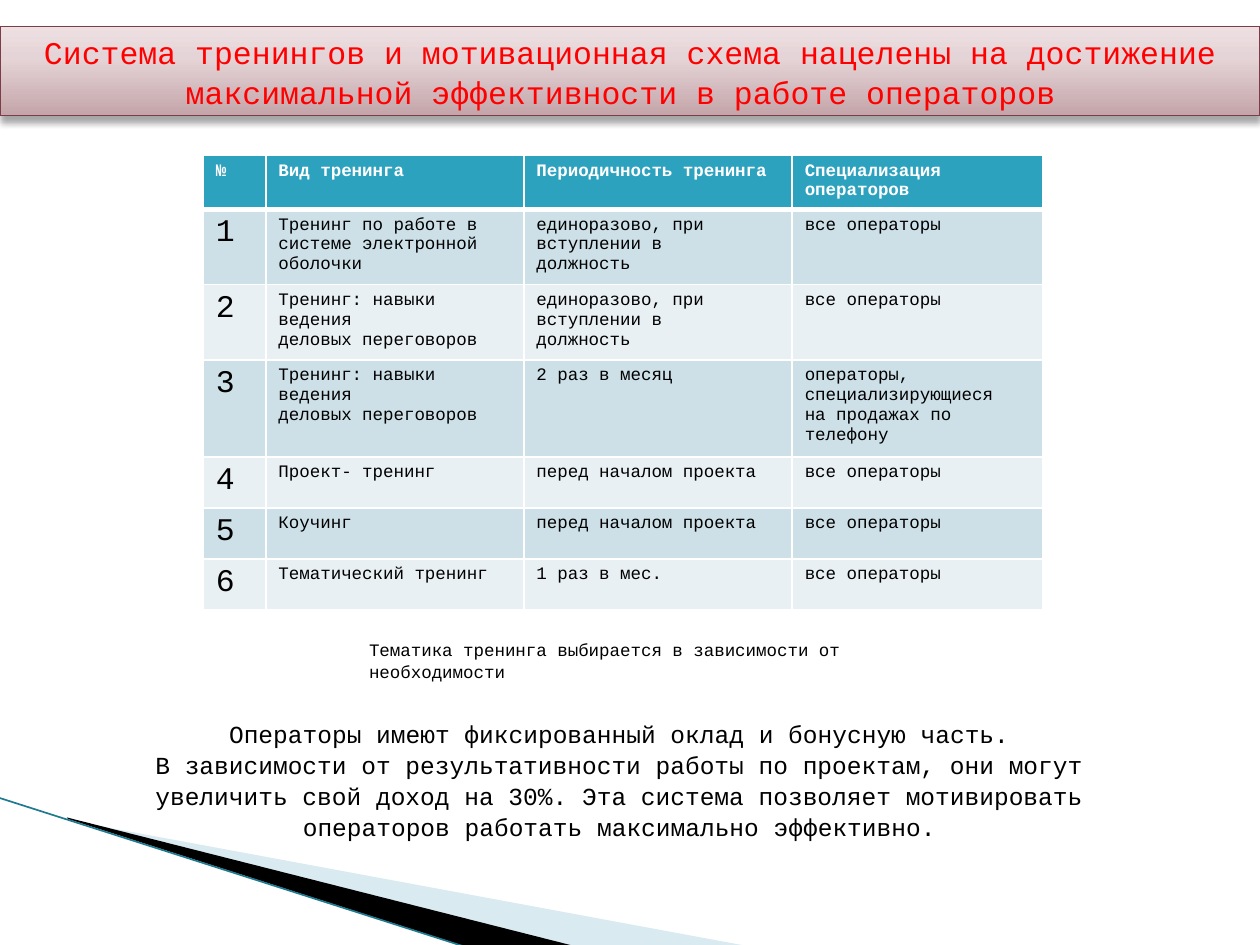
from pptx import Presentation
from pptx.dml.color import RGBColor
from pptx.enum.shapes import MSO_CONNECTOR, MSO_SHAPE
from pptx.enum.text import MSO_ANCHOR, PP_ALIGN
from pptx.oxml import parse_xml
from pptx.oxml.ns import nsdecls
from pptx.util import Cm, Pt

NS = nsdecls("a")
TITLE = ("Система тренингов и мотивационная схема нацелены на достижение\n"
         "максимальной эффективности в работе операторов ")
HEADINGS = ["№", "Вид тренинга", "Периодичность тренинга", "Специализация операторов"]
ON_JOINING = "единоразово, при вступлении в\nдолжность"
BEFORE_PROJECT = "перед началом проекта"
NEGOTIATION = "Тренинг: навыки ведения\nделовых переговоров"
EVERYONE = "все операторы"
TRAININGS = [
    ("Тренинг по работе в\nсистеме электронной\nоболочки", ON_JOINING, EVERYONE),
    (NEGOTIATION, ON_JOINING, EVERYONE),
    (NEGOTIATION, "2 раз в месяц",
     "операторы,\nспециализирующиеся\nна продажах по\nтелефону"),
    ("Проект- тренинг", BEFORE_PROJECT, EVERYONE),
    ("Коучинг", BEFORE_PROJECT, EVERYONE),
    ("Тематический тренинг", "1 раз в мес.", EVERYONE),
]
TOPIC_NOTE = "Тематика тренинга выбирается в зависимости от необходимости"
PAY = ("Операторы имеют фиксированный оклад и бонусную часть.\n"
       "В зависимости от результативности работы по проектам, они могут\n"
       "увеличить свой доход на 30%. Эта система позволяет мотивировать\n"
       "операторов работать максимально эффективно.")


def color(code):
    return RGBColor.from_string(code)


def write(frame, text, size=10, ink="000000", bold=False, align=PP_ALIGN.LEFT, spacing=None):
    frame.word_wrap = True
    for index, line in enumerate(text.split("\n")):
        paragraph = frame.add_paragraph() if index else frame.paragraphs[0]
        paragraph.alignment = align
        paragraph.line_spacing = spacing
        run = paragraph.add_run()
        run.text = line
        run.font.name = "Courier New"
        run.font.size = Pt(size)
        run.font.bold = bold
        run.font.color.rgb = color(ink)


class TrainingSlide:
    """Holds the colours of the deck and the slide being built."""

    accent = "2DA2BF"
    bands = ("CDE0E8", "E8F0F4")

    def __init__(self, slide):
        self.slide = slide
        self.shapes = slide.shapes

    def wedge(self, points, fill, alpha=100):
        start, *rest = [(Cm(x), Cm(y)) for x, y in points]
        builder = self.shapes.build_freeform(*start)
        builder.add_line_segments(rest, close=True)
        wedge = builder.convert_to_shape()
        wedge.shadow.inherit = False
        wedge.line.fill.background()
        wedge.fill.solid()
        wedge.fill.fore_color.rgb = color(fill)
        if alpha < 100:
            tint = wedge.element.find(".//" + "{*}solidFill/{*}srgbClr")
            tint.append(parse_xml(f'<a:alpha {NS} val="{alpha * 1000}"/>'))

    def edge(self, x1, y1, x2, y2, ink, width):
        edge = self.shapes.add_connector(
            MSO_CONNECTOR.STRAIGHT, Cm(x1), Cm(y1), Cm(x2), Cm(y2))
        edge.line.color.rgb = color(ink)
        edge.line.width = Pt(width)
        edge.element.spPr.append(parse_xml(f"<a:effectLst {NS}/>"))

    def banner(self, x, y, width, height, stops, outline, text):
        banner = self.shapes.add_shape(
            MSO_SHAPE.RECTANGLE, Cm(x), Cm(y), Cm(width), Cm(height))
        banner.line.color.rgb = color(outline)
        banner.line.width = Pt(0.75)
        marks = "".join(f'<a:gs pos="{place * 1000}"><a:srgbClr val="{code}"/></a:gs>'
                        for place, code in stops)
        properties = banner.element.spPr
        properties.insert(2, parse_xml(
            f'<a:gradFill {NS} rotWithShape="1"><a:gsLst>{marks}</a:gsLst>'
            '<a:lin ang="16200000" scaled="0"/></a:gradFill>'))
        properties.append(parse_xml(
            f'<a:effectLst {NS}><a:outerShdw blurRad="{Pt(4)}" dist="{Pt(3)}" dir="5400000" '
            'rotWithShape="0"><a:srgbClr val="000000"><a:alpha val="35000"/></a:srgbClr>'
            '</a:outerShdw></a:effectLst>'))
        banner.text_frame.vertical_anchor = MSO_ANCHOR.MIDDLE
        write(banner.text_frame, text, size=18, ink="FF0000",
              align=PP_ALIGN.CENTER, spacing=1.05)

    def text(self, x, y, width, height, text, **style):
        box = self.shapes.add_textbox(Cm(x), Cm(y), Cm(width), Cm(height))
        write(box.text_frame, text, spacing=1.06, **style)

    def cell(self, cell, text, fill, bottom=1, **style):
        write(cell.text_frame, text, **style)
        properties = cell._tc.get_or_add_tcPr()
        for side, width in zip("LRTB", (1, 1, 1, bottom)):
            properties.append(parse_xml(
                f'<a:ln{side} {NS} w="{Pt(width)}"><a:solidFill><a:srgbClr val="FFFFFF"/>'
                f'</a:solidFill></a:ln{side}>'))
        cell.fill.solid()
        cell.fill.fore_color.rgb = color(fill)

    def table(self, x, y, widths, heights, headings, records):
        table = self.shapes.add_table(
            len(heights), len(widths), Cm(x), Cm(y), Cm(sum(widths)), Cm(sum(heights))).table
        for column, width in zip(table.columns, widths):
            column.width = Cm(width)
        for row, height in zip(table.rows, heights):
            row.height = Cm(height)
        for column, heading in enumerate(headings):
            self.cell(table.cell(0, column), heading, self.accent, bottom=3,
                      ink="FFFFFF", bold=True)
        for number, record in enumerate(records, 1):
            band = self.bands[(number - 1) % 2]
            self.cell(table.cell(number, 0), str(number), band, size=18)
            for column, value in enumerate(record, 1):
                self.cell(table.cell(number, column), value, band)


def main():
    deck = Presentation()
    deck.slide_width, deck.slide_height = Cm(25.4), Cm(19.05)
    page = TrainingSlide(deck.slides.add_slide(deck.slide_layouts[6]))
    page.wedge([(1.4, 16.54), (15.11, 19.08), (11.58, 19.08), (1.4, 16.51)], "A0CBDC", alpha=40)
    page.wedge([(1.35, 16.48), (11.61, 19.08), (9.45, 19.1), (1.37, 16.51)], "000000")
    page.edge(-0.03, 16.08, 9.42, 19.1, "1F7A90", 0.95)
    page.banner(0, 0.53, 25.4, 1.8, [(0, "C4A5A9"), (65, "E5D4D7"), (100, "EEE0E2")],
                "7D3C4A", TITLE)
    page.table(4.1, 3.13, [1.26, 5.2, 5.41, 5.05],
               [1.09, 1.52, 1.52, 1.95, 1.03, 1.03, 1.03], HEADINGS, TRAININGS)
    page.text(7.19, 12.73, 10.59, 1.12, TOPIC_NOTE)
    page.text(1.09, 14.33, 22.81, 2.64, PAY, size=14, align=PP_ALIGN.CENTER)
    deck.save("out.pptx")


if __name__ == "__main__":
    main()
